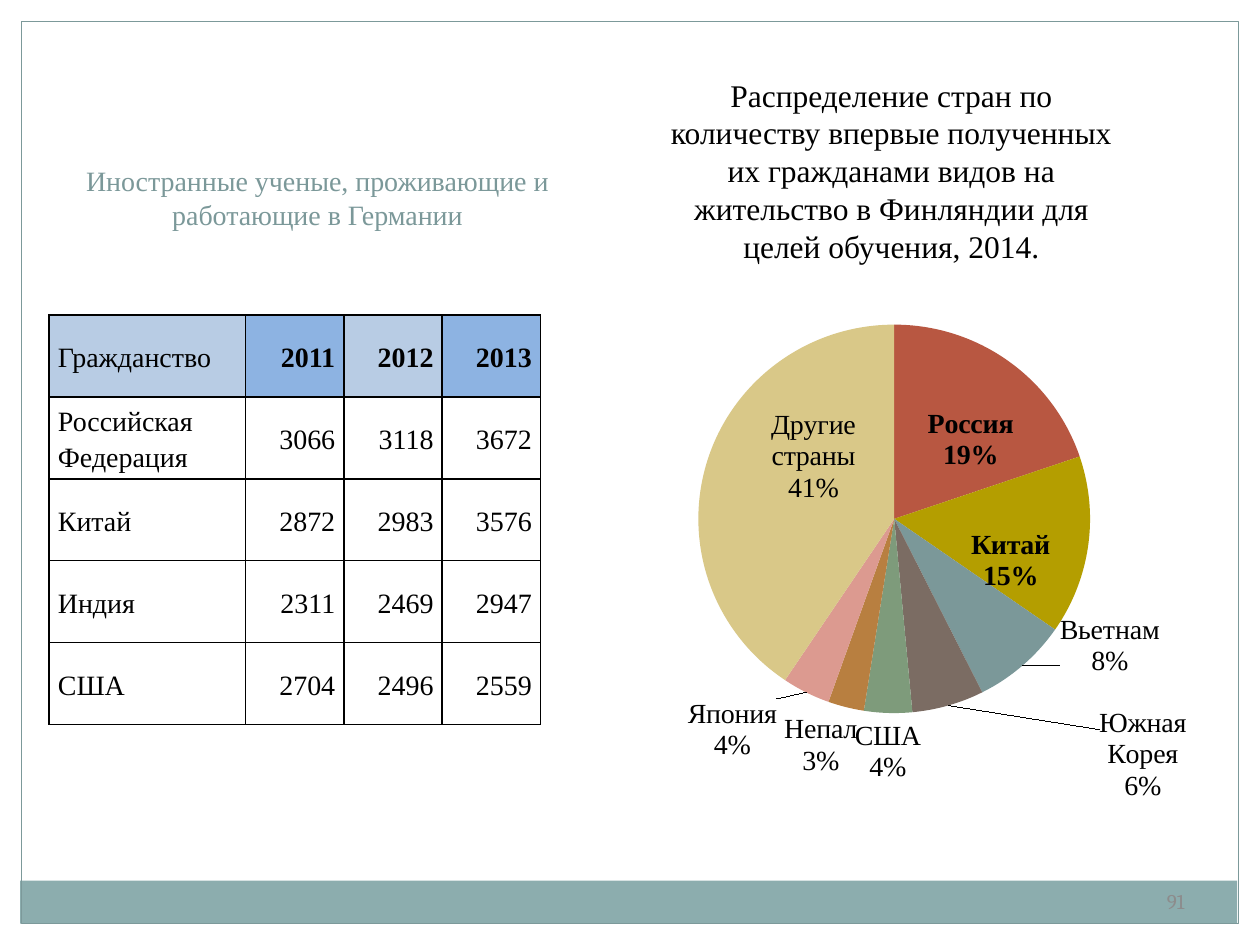
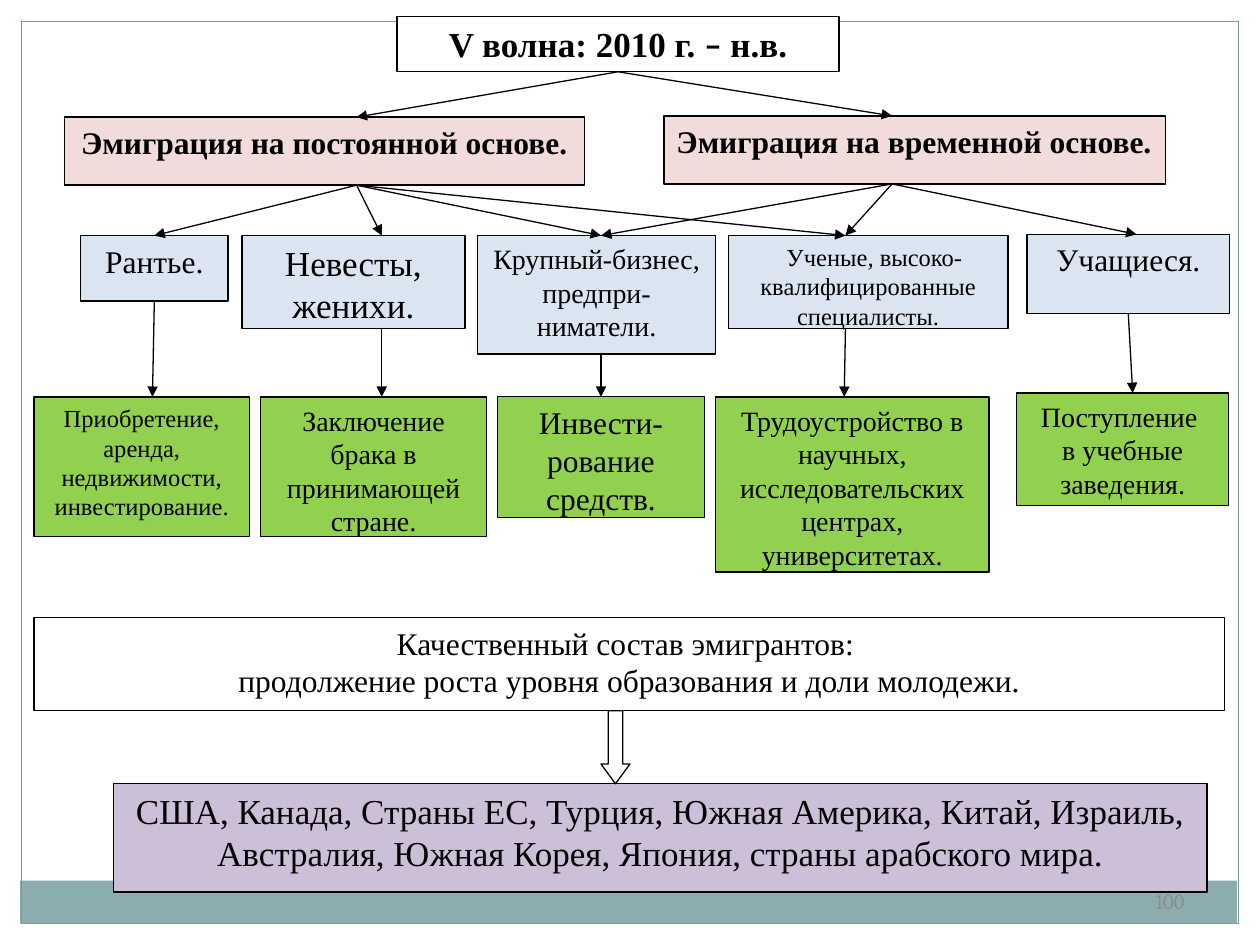
"""Build two slides on emigration: a table with a pie chart, and a flow diagram."""
from lxml.etree import SubElement
from pptx import Presentation
from pptx.chart.data import CategoryChartData
from pptx.dml.color import RGBColor
from pptx.enum.chart import XL_CHART_TYPE, XL_LABEL_POSITION
from pptx.enum.shapes import MSO_CONNECTOR, MSO_SHAPE
from pptx.enum.text import MSO_ANCHOR, MSO_AUTO_SIZE, PP_ALIGN
from pptx.oxml import parse_xml
from pptx.oxml.ns import nsdecls, qn
from pptx.util import Inches, Pt

COLORS = {
    "band": "8CADAE", "frame": "7C999A", "title": "7B9899", "number": "8C8C8C",
    "black": "000000", "white": "FFFFFF", "head": "B8CCE4", "head_alt": "8DB3E2",
    "pink": "F2DBDB", "blue": "DBE5F1", "green": "92D050", "violet": "CCC0D9",
}
SLICES = ["B85741", "B49E00", "7B9899", "7B6C63", "7E9B7B", "B87F40", "DC9A90", "D9C888"]
FONT = "Times New Roman"


def write(p, text, size=16, bold=False, color="black", font=FONT, align=PP_ALIGN.CENTER):
    """Add a formatted run to a paragraph."""
    p.alignment = align
    r = p.add_run()
    r.text = text
    r.font.size, r.font.bold, r.font.name = Pt(size), bold, font
    r.font.color.rgb = RGBColor.from_string(COLORS[color])


def style(shape, fill=None, line=None):
    """Set the fill and outline of a shape and drop its shadow."""
    shape.shadow.inherit = False
    if fill:
        shape.fill.solid()
        shape.fill.fore_color.rgb = RGBColor.from_string(COLORS[fill])
    else:
        shape.fill.background()
    if line:
        shape.line.color.rgb = RGBColor.from_string(COLORS[line])
        shape.line.width = Pt(0.75)
    else:
        shape.line.fill.background()


prs = Presentation()
prs.slide_width, prs.slide_height = Inches(10), Inches(7.5)
slides = [prs.slides.add_slide(prs.slide_layouts[5]) for _ in range(2)]

master_tree = prs.slide_master.shapes.element
for i, (box, fill, line) in enumerate([
    ((0.16, 6.99, 9.66, 0.34), "band", None),
    ((0.17, 0.17, 9.66, 7.16), None, "frame"),
]):
    sp = slides[0].shapes.add_shape(MSO_SHAPE.RECTANGLE, *map(Inches, box))
    style(sp, fill, line)
    master_tree.insert(2 + i, sp.element)

title_boxes = [(0.23, 0.94, 4.58, 1.25), (3.15, 0.13, 3.51, 0.44)]
for s, number, box in zip(slides, ["91", "100"], title_boxes):
    title = s.shapes.title
    title.left, title.top, title.width, title.height = map(Inches, box)
    title.text_frame.auto_size = MSO_AUTO_SIZE.NONE
    sp = s.shapes.add_textbox(Inches(7.17), Inches(6.95), Inches(2.33), Inches(0.4))
    tf = sp.text_frame
    tf.word_wrap, tf.vertical_anchor = True, MSO_ANCHOR.MIDDLE
    write(tf.paragraphs[0], number, size=12, color="number", font="Cambria", align=PP_ALIGN.RIGHT)

s = slides[0]
write(s.shapes.title.text_frame.paragraphs[0],
      "Иностранные ученые, проживающие и работающие в Германии", color="title")

rows = [
    ("Гражданство", "2011", "2012", "2013"),
    ("Российская Федерация", "3066", "3118", "3672"),
    ("Китай", "2872", "2983", "3576"),
    ("Индия", "2311", "2469", "2947"),
    ("США", "2704", "2496", "2559"),
]
frame = s.shapes.add_table(5, 4, Inches(0.39), Inches(2.5), Inches(3.9), Inches(3.25))
table = frame.table
table.first_row = table.horz_banding = False
for j, col in enumerate(table.columns):
    col.width = Inches(0.78 if j else 1.56)
for i, row in enumerate(rows):
    for j, text in enumerate(row):
        cell = table.cell(i, j)
        cell.margin_left = cell.margin_right = Inches(0.07)
        cell.margin_top = cell.margin_bottom = 0
        cell.vertical_anchor = MSO_ANCHOR.MIDDLE
        if i:
            cell.fill.background()
        else:
            cell.fill.solid()
            cell.fill.fore_color.rgb = RGBColor.from_string(COLORS["head_alt" if j % 2 else "head"])
        p = cell.text_frame.paragraphs[0]
        p.line_spacing = 1.15
        write(p, text, bold=i == 0 and j > 0, align=PP_ALIGN.RIGHT if j else PP_ALIGN.JUSTIFY)
for tcPr in frame.element.iter(qn("a:tcPr")):
    for k, side in enumerate("LRTB"):
        tcPr.insert(k, parse_xml(
            f'<a:ln{side} {nsdecls("a")} w="12700"><a:solidFill>'
            f'<a:srgbClr val="{COLORS["black"]}"/></a:solidFill></a:ln{side}>'))

data = CategoryChartData()
data.categories = ["Россия", "Китай", "Вьетнам", "Южная Корея", "США", "Непал", "Япония",
                   "Другие страны"]
data.add_series("Series 1", (20, 15, 8, 6, 4, 3, 4, 41))
chart = s.shapes.add_chart(XL_CHART_TYPE.PIE, Inches(4.53), Inches(1.87), Inches(5.14),
                           Inches(4.53), data).chart
chart.has_title = chart.has_legend = False
chart.font.size, chart.font.name = Pt(16), FONT
chart.font.color.rgb = RGBColor.from_string(COLORS["black"])
plot = chart.plots[0]
plot.vary_by_categories = True
series = plot.series[0]
for i, color in enumerate(SLICES):
    fmt = series.points[i].format
    fmt.fill.solid()
    fmt.fill.fore_color.rgb = RGBColor.from_string(color)
    fmt.line.fill.background()

labels = series.data_labels
labels.show_category_name = labels.show_percentage = True
labels.show_value = False
labels.position = XL_LABEL_POSITION.OUTSIDE_END
labels.font.size, labels.font.name = Pt(16), FONT
shifts = {0: (0.03, 0), 1: (0.03, 0.05), 2: (0.05, -0.1), 3: (0.23, 0.03),
          5: (0.02, 0), 6: (-0.04, 0), 7: (0.02, -0.06)}
for i in shifts:
    label = series.points[i].data_label
    if i == 0:
        tf = label.text_frame
        write(tf.paragraphs[0], "Россия", bold=True)
        write(tf.add_paragraph(), "19%", bold=True)
    else:
        label.font.size, label.font.name, label.font.bold = Pt(16), FONT, i == 1
    inside = i in (0, 1, 7)
    label.position = XL_LABEL_POSITION.CENTER if inside else XL_LABEL_POSITION.OUTSIDE_END

for dLbl in chart.element.iter(qn("c:dLbl")):
    for tag, val in (("showVal", "0"), ("showCatName", "1"), ("showPercent", "1")):
        dLbl.find(qn(f"c:{tag}")).set("val", val)
    SubElement(dLbl, qn("c:separator")).text = "\n"
    idx = dLbl.find(qn("c:idx"))
    x, y = shifts[int(idx.get("val"))]
    idx.addnext(parse_xml(
        f'<c:layout {nsdecls("c")}><c:manualLayout><c:x val="{x}"/><c:y val="{y}"/>'
        '</c:manualLayout></c:layout>'))
for dLbls in chart.element.iter(qn("c:dLbls")):
    separator = parse_xml(f'<c:separator {nsdecls("c")}>\n</c:separator>')
    last = dLbls.find(qn("c:showBubbleSize"))
    if last is None:
        last = dLbls.find(qn("c:showPercent"))
    last.addnext(separator)

area = next(chart.element.iter(qn("c:plotArea")))
for old in area.findall(qn("c:layout")):
    area.remove(old)
area.insert(0, parse_xml(
    f'<c:layout {nsdecls("c")}><c:manualLayout><c:layoutTarget val="inner"/>'
    '<c:xMode val="edge"/><c:yMode val="edge"/><c:x val="0.197"/><c:y val="0.102"/>'
    '<c:w val="0.605"/><c:h val="0.797"/></c:manualLayout></c:layout>'))

sp = s.shapes.add_textbox(Inches(5.16), Inches(0.55), Inches(3.83), Inches(1.62))
sp.text_frame.word_wrap = True
write(sp.text_frame.paragraphs[0],
      "Распределение стран по количеству впервые полученных их гражданами видов на "
      "жительство в Финляндии для целей обучения, 2014.", size=18)

s = slides[1]
wave = s.shapes.title
style(wave, "white", "black")
wave.text_frame.vertical_anchor = MSO_ANCHOR.TOP
for text, font in (("V волна: 2010 г. ", FONT), ("–", "Calibri"), (" н.в.", FONT)):
    write(wave.text_frame.paragraphs[0], text, size=20, bold=True, font=font)

boxes = {
    "permanent": (0.51, 0.93, 4.13, 0.54, "pink", 18, "Эмиграция на постоянной основе."),
    "temporary": (5.27, 0.92, 3.98, 0.54, "pink", 18, "Эмиграция на временной основе."),
    "rentiers": (0.64, 1.87, 1.17, 0.52, "blue", 18, "Рантье."),
    "couples": (1.92, 1.87, 1.77, 0.74, "blue", 20, "Невесты, женихи."),
    "business": (3.79, 1.87, 1.89, 0.94, "blue", 16, "Крупный-бизнес, предпри-ниматели."),
    "scientists": (5.78, 1.87, 2.22, 0.74, "blue", 14,
                   "Ученые, высоко-квалифицированные специалисты."),
    "students": (8.15, 1.86, 1.61, 0.63, "blue", 18, "Учащиеся."),
    "property": (0.27, 3.15, 1.71, 1.11, "green", 14,
                 "Приобретение, аренда, недвижимости, инвестирование."),
    "marriage": (2.07, 3.15, 1.79, 1.11, "green", 16, "Заключение брака в принимающей стране."),
    "investment": (3.95, 3.15, 1.64, 0.96, "green", 18, "Инвести-рование средств."),
    "work": (5.68, 3.15, 2.17, 1.39, "green", 16,
             "Трудоустройство в научных, исследовательских центрах, университетах."),
    "study": (8.07, 3.12, 1.68, 0.89, "green", 16, "Поступление \nв учебные заведения."),
    "quality": (0.27, 4.9, 9.45, 0.74, "white", 18,
                "Качественный состав эмигрантов: \n"
                "продолжение роста уровня образования и доли молодежи."),
    "countries": (0.9, 6.22, 8.68, 0.86, "violet", 20,
                  "США, Канада, Страны ЕС, Турция, Южная Америка, Китай, Израиль, Австралия, "
                  "Южная Корея, Япония, страны арабского мира."),
}
shapes = {"wave": wave}
for name, (x, y, w, h, fill, size, text) in boxes.items():
    sp = s.shapes.add_shape(MSO_SHAPE.RECTANGLE, Inches(x), Inches(y), Inches(w), Inches(h))
    style(sp, fill, "black")
    tf = sp.text_frame
    tf.word_wrap, tf.vertical_anchor = True, MSO_ANCHOR.TOP
    for i, line in enumerate(text.split("\n")):
        p = tf.add_paragraph() if i else tf.paragraphs[0]
        write(p, line, size=size, bold=fill == "pink",
              align=PP_ALIGN.LEFT if name == "temporary" else PP_ALIGN.CENTER)
    shapes[name] = sp
next(shapes["scientists"].element.iter(qn("a:pPr"))).set("indent", str(Inches(0.1)))

links = [
    ("wave", 4.9, "permanent", 2.83), ("wave", 4.9, "temporary", 7.08),
    ("permanent", 2.83, "rentiers", 1.22), ("permanent", 2.83, "couples", 3.03),
    ("permanent", 2.83, "business", 4.77), ("permanent", 2.83, "scientists", 6.71),
    ("temporary", 7.08, "business", 4.77), ("temporary", 7.08, "scientists", 6.71),
    ("temporary", 7.08, "students", 9.02), ("rentiers", 1.22, "property", 1.21),
    ("couples", 3.03, "marriage", 3.03), ("business", 4.77, "investment", 4.76),
    ("scientists", 6.71, "work", 6.7), ("students", 8.94, "study", 8.99),
]
for start, x1, end, x2 in links:
    a, b = shapes[start], shapes[end]
    x1, x2 = Inches(x1), Inches(x2)
    line = s.shapes.add_connector(MSO_CONNECTOR.STRAIGHT, x1, a.top + a.height, x2, b.top)
    if abs(a.left + a.width / 2 - x1) < Inches(0.02):
        line.begin_connect(a, 2)
    if abs(b.left + b.width / 2 - x2) < Inches(0.02):
        line.end_connect(b, 0)
    line.line.color.rgb = RGBColor.from_string(COLORS["black"])
    line.line.width = Pt(0.75)
    spPr = line.element.find(qn("p:spPr"))
    SubElement(spPr.find(qn("a:ln")), qn("a:tailEnd"), type="triangle")
    SubElement(spPr, qn("a:effectLst"))

arrow = s.shapes.add_shape(MSO_SHAPE.DOWN_ARROW, Inches(4.77), Inches(5.64), Inches(0.23),
                           Inches(0.58))
arrow.adjustments[0], arrow.adjustments[1] = 0.5, 0.68
style(arrow, "white", "black")

prs.save("out.pptx")
